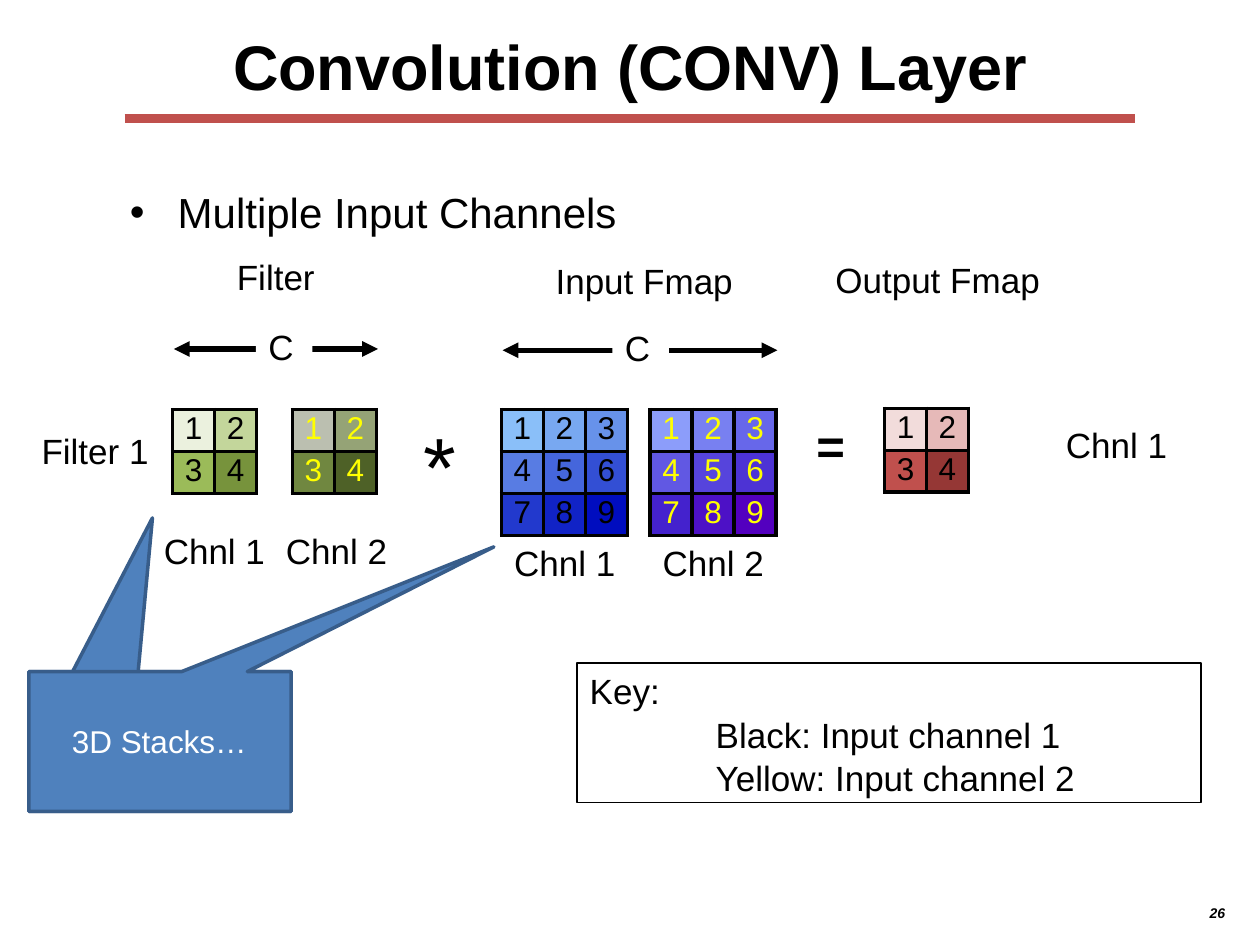
from lxml import etree
from pptx import Presentation
from pptx import util as u
from pptx.dml.color import RGBColor
from pptx.enum import shapes, text
from pptx.oxml import ns

BLACK = RGBColor(0x00, 0x00, 0x00)
WHITE = RGBColor(0xFF, 0xFF, 0xFF)
YELLOW = RGBColor(0xFF, 0xFF, 0x00)
RED = RGBColor(0xC0, 0x50, 0x4D)
BLUE = RGBColor(0x4F, 0x81, 0xBD)
NAVY = RGBColor(0x38, 0x5D, 0x8A)

# Cell fills, row by row
GREEN = "EBF1DE C3D69B 9BBB59 77933C"
OLIVE = "BBBFB0 95A376 708740 4E6127"
ROSE = "F2DCDB E6B9B8 C0504D 953735"
SKY = "8ABFF9 78A8F1 6792EA 587CE3 4566DC 334FD4 2239CD 1123C6 000DBF"
VIOLET = "8C9DFA 7880F1 6767EA 6158E3 5644DC 4D33D4 4422CD 4D11C6 5300BF"

CELL = 1 / 3


def sub(node, tag, **attrs):
    return etree.SubElement(node, ns.qn(tag), **attrs)


class Deck:
    font = "Arial"

    def __init__(self):
        self.prs = Presentation()
        self.prs.slide_width = u.Inches(10)
        self.prs.slide_height = u.Inches(7.5)
        self.slide = self.prs.slides.add_slide(self.prs.slide_layouts[6])

    def box(self, x, y, w, h):
        return [u.Inches(v) for v in (x, y, w, h)]

    def pad(self, frame, top=0.01):
        frame.margin_left = frame.margin_right = frame.margin_bottom = 0
        frame.margin_top = u.Inches(top)

    def run(self, par, words, size, color=BLACK, bold=False, italic=False):
        run = par.add_run()
        run.text = words
        font = run.font
        font.name, font.size = self.font, u.Pt(size)
        font.bold, font.italic = bold, italic
        font.color.rgb = color

    def indent(self, par, left, first=0):
        props = par._p.get_or_add_pPr()
        props.set("marL", str(u.Inches(left)))
        props.set("indent", str(u.Inches(first)))
        return props

    def label(self, words, x, y, w, h=0.36, size=20, left=0.01, **look):
        frame = self.slide.shapes.add_textbox(*self.box(x, y, w, h)).text_frame
        self.pad(frame)
        frame.word_wrap = False
        par = frame.paragraphs[0]
        par.space_before = u.Pt(1)
        self.indent(par, left)
        self.run(par, words, size, **look)
        return par

    def bullet(self, words, x, y, w, h):
        par = self.label(words, x, y, w, h, size=24)
        props = self.indent(par, 0.39, -0.38)
        sub(props, "a:buFont", typeface=self.font)
        sub(props, "a:buChar", char="•")

    def line(self, x1, x2, y, width, color=BLACK, heads=False):
        ends = [u.Inches(v) for v in (x1, y, x2, y)]
        line = self.slide.shapes.add_connector(shapes.MSO_CONNECTOR.STRAIGHT, *ends)
        line.line.width = u.Pt(width)
        line.line.color.rgb = color
        if heads:
            for tag in ("a:headEnd", "a:tailEnd"):
                sub(line.line._get_or_add_ln(), tag, type="triangle")
        sub(line._element.spPr, "a:effectLst")

    def shape(self, kind, x, y, w, h, fill=None, edge=None, width=1):
        shape = self.slide.shapes.add_shape(kind, *self.box(x, y, w, h))
        shape.shadow.inherit = False
        if fill is None:
            shape.fill.background()
        else:
            shape.fill.solid()
            shape.fill.fore_color.rgb = fill
        if edge is None:
            shape.line.fill.background()
        else:
            shape.line.color.rgb = edge
            shape.line.width = u.Pt(width)
        return shape

    def callout(self, x, y, w, h, tip):
        kind = shapes.MSO_SHAPE.RECTANGULAR_CALLOUT
        shape = self.shape(kind, x, y, w, h, BLUE, NAVY, 2)
        shape.adjustments[0] = (tip[0] - x - w / 2) / w
        shape.adjustments[1] = (tip[1] - y - h / 2) / h

    def span(self, x1, x2, y, mid):
        """Double arrow, broken by the letter C."""
        self.line(x1, x2, y, 3, heads=True)
        self.shape(shapes.MSO_SHAPE.RECTANGLE, mid, y - 0.22, 0.45, 0.44, WHITE)
        self.label("C", mid + 0.09, y - 0.2, 0.23)

    def grid(self, x, y, fills, color=BLACK):
        fills = fills.split()
        n = int(len(fills) ** 0.5)
        side = n * CELL
        table = self.slide.shapes.add_table(n, n, *self.box(x, y, side, side)).table
        table.first_row = table.horz_banding = False
        for i in range(n):
            table.columns[i].width = table.rows[i].height = u.Inches(CELL)
        for i, fill in enumerate(fills):
            cell = table.cell(i // n, i % n)
            self.pad(cell)
            par = cell.text_frame.paragraphs[0]
            par.alignment = text.PP_ALIGN.CENTER
            par.space_before = u.Pt(1.1)
            self.run(par, str(i + 1), 18, color)
            props = cell._tc.get_or_add_tcPr()
            for edge in "LRTB":
                ln = sub(props, "a:ln" + edge, w=str(u.Pt(2.25)))
                sub(sub(ln, "a:solidFill"), "a:srgbClr", val=str(BLACK))
            cell.fill.solid()
            cell.fill.fore_color.rgb = RGBColor.from_string(fill)

    def key(self, x, y, w, h, rows):
        shape = self.shape(shapes.MSO_SHAPE.RECTANGLE, x, y, w, h, edge=BLACK)
        frame = shape.text_frame
        self.pad(frame, 0.04)
        frame.word_wrap = True
        frame.vertical_anchor = text.MSO_ANCHOR.TOP
        for i, words in enumerate(rows):
            par = frame.add_paragraph() if i else frame.paragraphs[0]
            par.alignment = text.PP_ALIGN.LEFT
            par.line_spacing = 1.04
            par.space_before = u.Pt(0 if i else 2.7)
            self.indent(par, 1.1 if i else 0.1)
            self.run(par, words, 20)


def main():
    deck = Deck()

    # Title and bullet
    deck.line(0.99, 9.01, 0.94, 5.5, RED)
    deck.label("Convolution (CONV) Layer", 1.83, 0.21, 6.34, 0.63, 36, 0.02, bold=True)
    deck.bullet("Multiple Input Channels", 1.02, 1.47, 3.89, 0.43)

    # Filter, input and output grids
    deck.grid(1.37, 3.25, GREEN)
    deck.grid(2.32, 3.25, OLIVE, YELLOW)
    deck.grid(3.98, 3.25, SKY)
    deck.grid(5.16, 3.25, VIOLET, YELLOW)
    deck.grid(7.02, 3.24, ROSE)

    # Labels
    for words, x, y, w in (
        ("Filter", 1.87, 2.02, 0.65),
        ("Input Fmap", 4.4, 2.05, 1.43),
        ("Output Fmap", 6.62, 2.04, 1.65),
        ("Filter 1", 0.32, 3.4, 0.88),
        ("Chnl 1", 1.29, 4.19, 0.83),
        ("Chnl 2", 2.26, 4.19, 0.83),
        ("Chnl 1", 4.07, 4.29, 0.83),
        ("Chnl 2", 5.25, 4.29, 0.83),
        ("Chnl 1", 8.45, 3.35, 0.83),
    ):
        deck.label(words, x, y, w)

    # Operators
    deck.label("*", 3.35, 3.27, 0.29, 0.83, 48)
    deck.label("=", 6.47, 3.29, 0.26, 0.49, 28, bold=True)

    # Channel spans
    deck.span(1.38, 3, 2.77, 2.03)
    deck.span(3.99, 6.17, 2.78, 4.86)

    # Key
    rows = ("Key:", "Black: Input channel 1", "Yellow: Input channel 2")
    deck.key(4.58, 5.26, 4.95, 1.11, rows)

    # Callout with two tips
    for tip in ((1.21, 4.11), (3.92, 4.34)):
        deck.callout(0.23, 5.33, 2.08, 1.11, tip)
    deck.label("3D Stacks…", 0.56, 5.72, 1.42, 0.33, 18, color=WHITE)

    # Page number
    deck.label("26", 9.57, 7.17, 0.18, 0.15, 8, 0.03, bold=True, italic=True)

    deck.prs.save("out.pptx")


if __name__ == "__main__":
    main()
